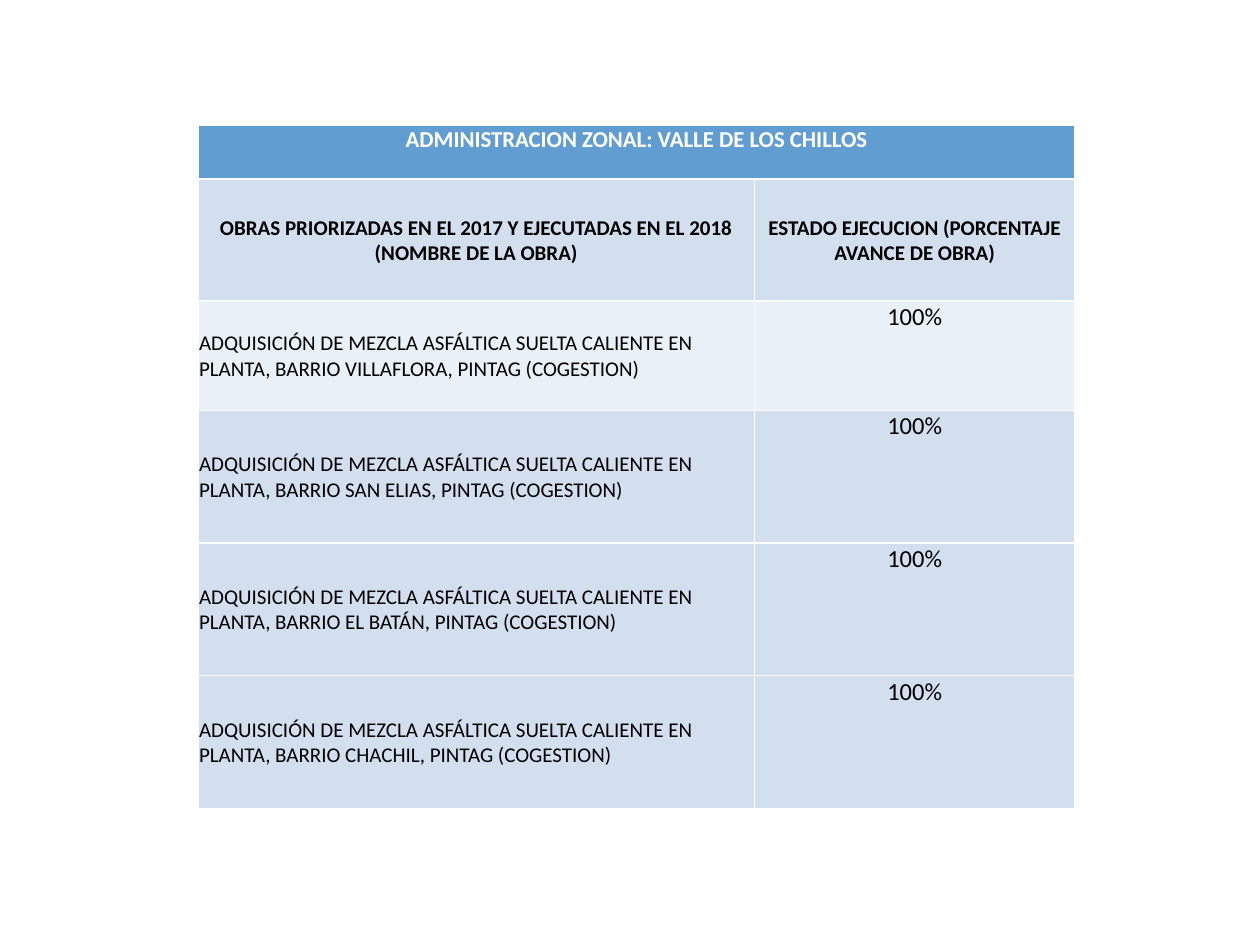
from lxml import etree
from pptx import Presentation
from pptx.dml.color import RGBColor
from pptx.enum.text import MSO_ANCHOR, PP_ALIGN
from pptx.oxml.ns import qn
from pptx.util import Pt

LEFT, CENTER = PP_ALIGN.LEFT, PP_ALIGN.CENTER
TOP, MIDDLE = MSO_ANCHOR.TOP, MSO_ANCHOR.MIDDLE
BLANK_LAYOUT = 6

COLORS = {
    "white": "FFFFFF",
    "black": "000000",
    "title": "629DD1",
    "band": "D3DFEE",
    "light": "EAF0F7",
}
COLUMN_WIDTHS = [318.24, 182.88]
ROW_HEIGHTS = [31.2, 69.6, 62.4, 75.84, 75.84, 75.84]
MARGINS = {
    "margin_left": Pt(0.72),
    "margin_right": Pt(0.72),
    "margin_top": Pt(0.72),
    "margin_bottom": Pt(0),
}

TITLE = {"size": 13, "bold": True, "color": "white", "align": CENTER, "anchor": TOP}
HEADING = {"size": 12, "bold": True, "color": "black", "align": CENTER, "anchor": MIDDLE}
WORK = {"size": 12, "bold": False, "color": "black", "align": LEFT, "anchor": MIDDLE}
PROGRESS = {"size": 14, "bold": False, "color": "black", "align": CENTER, "anchor": TOP}

TITLE_TEXT = "ADMINISTRACION ZONAL: VALLE DE LOS CHILLOS"
HEADINGS = [
    "OBRAS PRIORIZADAS EN EL 2017 Y EJECUTADAS EN EL 2018 (NOMBRE DE LA OBRA)",
    "ESTADO EJECUCION (PORCENTAJE AVANCE DE OBRA)",
]
WORK_TEXT = (
    "ADQUISICIÓN DE MEZCLA ASFÁLTICA SUELTA CALIENTE EN PLANTA, "
    "BARRIO {}, PINTAG (COGESTION)"
)
WORKS = [
    ("VILLAFLORA", "100%", "light"),
    ("SAN ELIAS", "100%", "band"),
    ("EL BATÁN", "100%", "band"),
    ("CHACHIL", "100%", "band"),
]


def set_borders(cell, top=1, bottom=1):
    properties = cell._tc.get_or_add_tcPr()
    widths = {"a:lnL": 1, "a:lnR": 1, "a:lnT": top, "a:lnB": bottom}
    for tag, width in widths.items():
        line = etree.SubElement(properties, qn(tag), w=str(Pt(width)))
        fill = etree.SubElement(line, qn("a:solidFill"))
        etree.SubElement(fill, qn("a:srgbClr"), val=COLORS["white"])


def fill_cell(cell, text, style, fill, **borders):
    set_borders(cell, **borders)
    cell.fill.solid()
    cell.fill.fore_color.rgb = RGBColor.from_string(COLORS[fill])
    cell.vertical_anchor = style["anchor"]
    for name, value in MARGINS.items():
        setattr(cell, name, value)
    paragraph = cell.text_frame.paragraphs[0]
    paragraph.alignment = style["align"]
    run = paragraph.add_run()
    run.text = text
    font_values = {"name": "Calibri", "size": Pt(style["size"]), "bold": style["bold"]}
    for name, value in font_values.items():
        setattr(run.font, name, value)
    run.font.color.rgb = RGBColor.from_string(COLORS[style["color"]])


def add_works_table(slide):
    table = slide.shapes.add_table(
        len(ROW_HEIGHTS), len(COLUMN_WIDTHS), Pt(113.04), Pt(71.28),
        Pt(sum(COLUMN_WIDTHS)), Pt(sum(ROW_HEIGHTS)),
    ).table
    for column, width in zip(table.columns, COLUMN_WIDTHS):
        column.width = Pt(width)
    for row, height in zip(table.rows, ROW_HEIGHTS):
        row.height = Pt(height)
    return table


def main():
    presentation = Presentation()
    presentation.slide_width, presentation.slide_height = Pt(720), Pt(540)
    slide = presentation.slides.add_slide(presentation.slide_layouts[BLANK_LAYOUT])
    table = add_works_table(slide)

    title_cell = table.cell(0, 0)
    title_cell.merge(table.cell(0, 1))
    fill_cell(title_cell, TITLE_TEXT, TITLE, "title", bottom=1.5)
    for column, heading in enumerate(HEADINGS):
        fill_cell(table.cell(1, column), heading, HEADING, "band", top=1.5)
    for row, (district, progress, fill) in enumerate(WORKS, start=2):
        fill_cell(table.cell(row, 0), WORK_TEXT.format(district), WORK, fill)
        fill_cell(table.cell(row, 1), progress, PROGRESS, fill)

    presentation.save("out.pptx")


if __name__ == "__main__":
    main()
